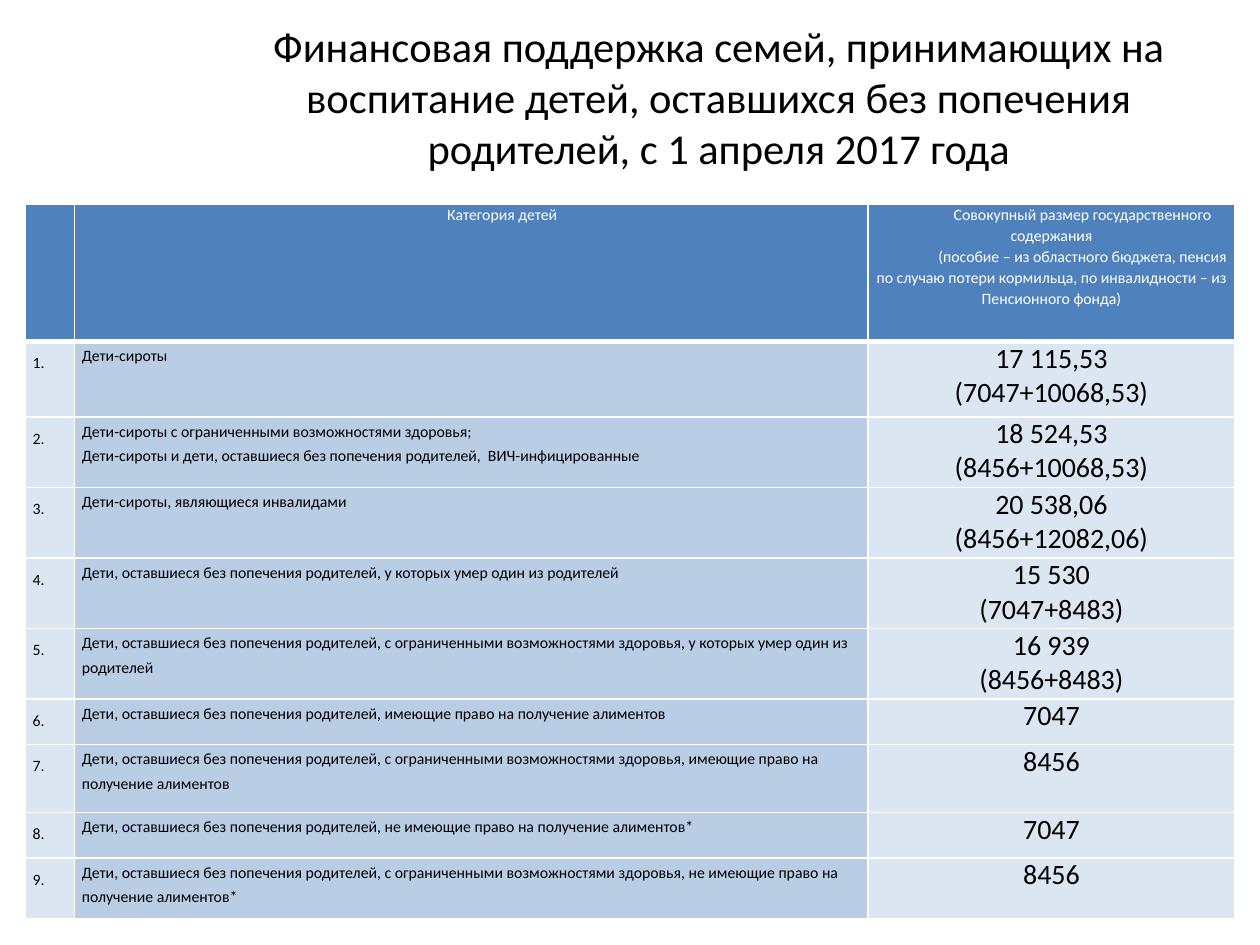
from lxml import etree
from pptx import Presentation
from pptx.dml.color import RGBColor
from pptx.enum.text import MSO_ANCHOR, PP_ALIGN
from pptx.oxml.ns import qn
from pptx.util import Inches, Pt

CENTER = PP_ALIGN.CENTER
LEFT = PP_ALIGN.LEFT
JUSTIFY = PP_ALIGN.JUSTIFY
MIDDLE = MSO_ANCHOR.MIDDLE
TITLE_ONLY = 5

FONT = "Calibri"
COLORS = {
    "text": "000000",
    "white": "FFFFFF",
    "header": "4F81BD",
    "light": "DCE6F2",
    "category": "B9CDE5",
}

TITLE = (
    "Финансовая поддержка семей, принимающих на воспитание детей, "
    "оставшихся без попечения родителей, с 1 апреля 2017 года"
)
HEADERS = [
    "",
    "Категория детей",
    "Совокупный размер государственного содержания\n"
    "(пособие – из областного бюджета, пенсия по случаю потери кормильца, "
    "по инвалидности – из Пенсионного фонда)",
]
ORPHANS = "Дети-сироты"
NO_CARE = "Дети, оставшиеся без попечения родителей,"
LIMITED = "с ограниченными возможностями здоровья"
SUPPORT = [
    (ORPHANS, "17 115,53\n(7047+10068,53)"),
    (
        f"{ORPHANS} {LIMITED};\n"
        "Дети-сироты и дети, оставшиеся без попечения родителей,  ВИЧ-инфицированные",
        "18 524,53\n(8456+10068,53)",
    ),
    (f"{ORPHANS}, являющиеся инвалидами", "20 538,06\n(8456+12082,06)"),
    (f"{NO_CARE} у которых умер один из родителей", "15 530\n(7047+8483)"),
    (f"{NO_CARE} {LIMITED}, у которых умер один из родителей", "16 939\n(8456+8483)"),
    (f"{NO_CARE} имеющие право на получение алиментов", "7047"),
    (f"{NO_CARE} {LIMITED}, имеющие право на получение алиментов", "8456"),
    (f"{NO_CARE} не имеющие право на получение алиментов*", "7047"),
    (f"{NO_CARE} {LIMITED}, не имеющие право на получение алиментов*", "8456"),
]
COLUMN_WIDTHS = [0.39, 6.3, 2.91]
ROW_HEIGHTS = [1.09, 0.6, 0.56, 0.56, 0.56, 0.56, 0.36, 0.54, 0.36, 0.48]


def rgb(name):
    return RGBColor.from_string(COLORS[name])


def format_text(text_frame, size, color, alignment, spacing=None, indent=None):
    for paragraph in text_frame.paragraphs:
        paragraph.alignment = alignment
        if spacing:
            paragraph.line_spacing = Pt(spacing)
        if indent:
            properties = paragraph._p.get_or_add_pPr()
            properties.set("marL", "0")
            properties.set("indent", str(Inches(indent)))
        for item in (paragraph, *paragraph.runs):
            item.font.name = FONT
            item.font.size = Pt(size)
            item.font.bold = False
            item.font.color.rgb = rgb(color)


def add_borders(cell, bottom_width, top_width):
    properties = cell._tc.get_or_add_tcPr()
    widths = {"lnL": 1, "lnR": 1, "lnT": top_width, "lnB": bottom_width}
    for side, width in widths.items():
        line = etree.SubElement(properties, qn(f"a:{side}"), w=str(Pt(width)))
        fill = etree.SubElement(line, qn("a:solidFill"))
        etree.SubElement(fill, qn("a:srgbClr"), val=COLORS["white"])


def fill_cell(cell, text, fill, row, **text_format):
    cell.margin_left = cell.margin_right = Inches(0.06)
    cell.margin_top = cell.margin_bottom = 0
    add_borders(cell, 3 if row == 0 else 1, 3 if row == 1 else 1)
    cell.fill.solid()
    cell.fill.fore_color.rgb = rgb(fill)
    cell.text_frame.text = text
    format_text(cell.text_frame, **text_format)


def add_title(slide):
    title = slide.shapes.title
    title.left, title.top = Inches(1.69), Inches(0.15)
    title.width, title.height = Inches(8.03), Inches(1.23)
    text_frame = title.text_frame
    text_frame.text = TITLE
    text_frame.word_wrap = True
    text_frame.vertical_anchor = MIDDLE
    text_frame.margin_top = text_frame.margin_bottom = 0
    format_text(text_frame, 24.3, "text", CENTER)


def add_support_table(slide):
    table = slide.shapes.add_table(
        len(ROW_HEIGHTS), len(COLUMN_WIDTHS),
        Inches(0.2), Inches(1.62), Inches(sum(COLUMN_WIDTHS)), Inches(sum(ROW_HEIGHTS)),
    ).table
    table.horz_banding = False
    for column, width in zip(table.columns, COLUMN_WIDTHS):
        column.width = Inches(width)
    for row, height in zip(table.rows, ROW_HEIGHTS):
        row.height = Inches(height)

    for column, header in enumerate(HEADERS):
        fill_cell(table.cell(0, column), header, "header", 0,
                  size=9, color="white", alignment=CENTER, spacing=12, indent=0.49)
    for row, (category, amount) in enumerate(SUPPORT, start=1):
        fill_cell(table.cell(row, 0), f"{row}.", "light", row,
                  size=9, color="text", alignment=JUSTIFY, spacing=18)
        fill_cell(table.cell(row, 1), category, "category", row,
                  size=9, color="text", alignment=LEFT, spacing=14)
        fill_cell(table.cell(row, 2), amount, "light", row,
                  size=16, color="text", alignment=CENTER)


def main():
    presentation = Presentation()
    presentation.slide_width = Inches(10)
    presentation.slide_height = Inches(7.5)
    slide = presentation.slides.add_slide(presentation.slide_layouts[TITLE_ONLY])
    add_title(slide)
    add_support_table(slide)
    presentation.save("out.pptx")


if __name__ == "__main__":
    main()
